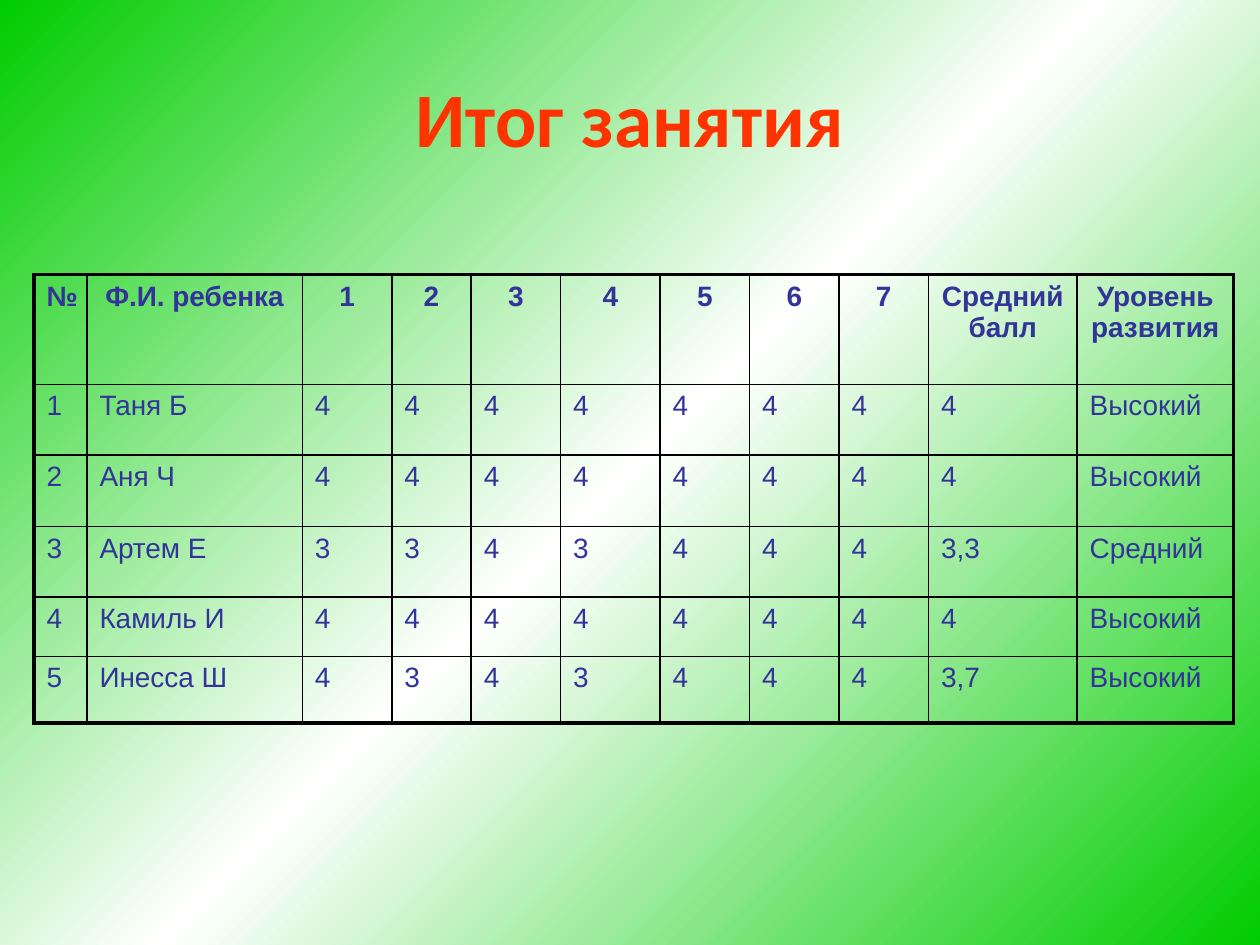
"""Build a slide with a table of lesson results."""
from copy import deepcopy
from typing import NamedTuple

from lxml import etree
from pptx import Presentation
from pptx.dml.color import RGBColor
from pptx.enum.text import MSO_ANCHOR, PP_ALIGN
from pptx.oxml.ns import qn
from pptx.util import Inches, Pt

CENTER, LEFT = PP_ALIGN.CENTER, PP_ALIGN.LEFT
MIDDLE = MSO_ANCHOR.MIDDLE
GREEN, WHITE, RED, NAVY, BLACK = "00CC00", "FFFFFF", "FF3300", "333399", "000000"
THIN, THICK = 1, 2.25
WIDTHS = [0.42, 1.71, 0.71, 0.63, 0.71, 0.79, 0.71, 0.71, 0.71, 1.18, 1.24]
HEIGHTS = [0.87, 0.56, 0.57, 0.56, 0.47, 0.53]


class Child(NamedTuple):
    name: str
    marks: str
    mean: str
    level: str


HEADS = ["№", "Ф.И. ребенка", *"1234567", "Средний балл", "Уровень развития"]
KIDS = [
    Child("Таня Б", "4444444", "4", "Высокий"),
    Child("Аня Ч", "4444444", "4", "Высокий"),
    Child("Артем Е", "3343444", "3,3", "Средний"),
    Child("Камиль И", "4444444", "4", "Высокий"),
    Child("Инесса Ш", "4343444", "3,7", "Высокий"),
]


def color(code: str) -> RGBColor:
    """Turn a hex string into a colour."""
    return RGBColor.from_string(code)


def style(par, font: str, size: float, code: str, bold: bool, align) -> None:
    """Format a paragraph and its runs."""
    par.alignment = align
    for run in par.runs:
        run.font.name = font
        run.font.size = Pt(size)
        run.font.bold = bold
        run.font.color.rgb = color(code)


def paint(slide) -> None:
    """Fill the background with a diagonal gradient."""
    fill = slide.background.fill
    fill.gradient()
    fill.gradient_angle = 315
    stops = slide.element.find(".//" + qn("a:gsLst"))
    stops.append(deepcopy(stops[-1]))
    for stop, place, code in zip(fill.gradient_stops, (0, 0.5, 1), (GREEN, WHITE, GREEN)):
        stop.position = place
        stop.color.rgb = color(code)


def edge(cell, side: str, width: float) -> None:
    """Draw one border of a cell."""
    props = cell._tc.get_or_add_tcPr()
    line = etree.SubElement(props, qn(f"a:ln{side}"), w=str(Pt(width)))
    fill = etree.SubElement(line, qn("a:solidFill"))
    etree.SubElement(fill, qn("a:srgbClr"), val=BLACK)


def write(cell, text: str, head: bool, align) -> None:
    """Set the text of a cell with its spacing."""
    cell.text_frame.text = text
    par = cell.text_frame.paragraphs[0]
    style(par, "Arial", 16, NAVY, head, align)
    space = etree.SubElement(par._p.get_or_add_pPr(), qn("a:spcBef"))
    etree.SubElement(space, qn("a:spcPct"), val="20000")


def draw(slide, rows: list[list[str]]) -> None:
    """Add the table of results."""
    frame = slide.shapes.add_table(
        len(rows), len(WIDTHS), Inches(0.27), Inches(2.18),
        Inches(sum(WIDTHS)), Inches(sum(HEIGHTS)))
    table = frame.table
    table.first_row = table.horz_banding = False
    for col, width in zip(table.columns, WIDTHS):
        col.width = Inches(width)
    for row, height in zip(table.rows, HEIGHTS):
        row.height = Inches(height)
    for r, row in enumerate(rows):
        for c, text in enumerate(row):
            cell = table.cell(r, c)
            write(cell, text, r == 0, CENTER if r == 0 and c > 0 else LEFT)
            outer = {"L": c == 0, "R": c == len(row) - 1,
                     "T": r == 0, "B": r == len(rows) - 1}
            for side, thick in outer.items():
                edge(cell, side, THICK if thick else THIN)
            cell.fill.background()


def main() -> None:
    """Build and save the slide."""
    deck = Presentation()
    deck.slide_width, deck.slide_height = Inches(10), Inches(7.5)
    slide = deck.slides.add_slide(deck.slide_layouts[5])
    paint(slide)
    title = slide.shapes.title
    title.left, title.top = Inches(0.5), Inches(0.3)
    title.width, title.height = Inches(9), Inches(1.25)
    title.text_frame.text = "Итог занятия"
    title.text_frame.vertical_anchor = MIDDLE
    style(title.text_frame.paragraphs[0], "Calibri", 44, RED, True, CENTER)
    rows = [[str(n), kid.name, *kid.marks, kid.mean, kid.level]
            for n, kid in enumerate(KIDS, 1)]
    draw(slide, [HEADS, *rows])
    deck.save("out.pptx")


if __name__ == "__main__":
    main()
